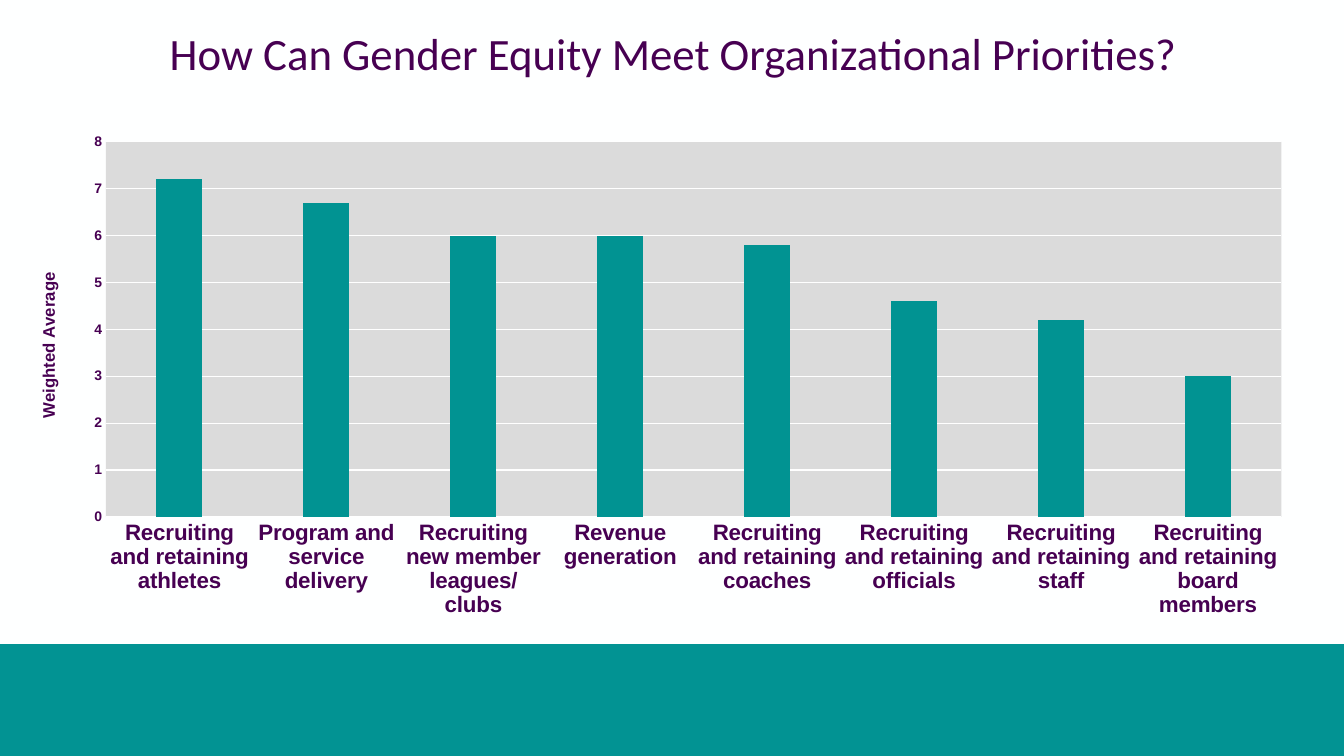
from dataclasses import dataclass

from lxml import etree
from pptx import Presentation
from pptx.chart.data import CategoryChartData
from pptx.dml.color import RGBColor
from pptx.enum import chart as charts, shapes, text
from pptx.oxml import ns, parse_xml
from pptx.util import Inches, Pt


@dataclass(frozen=True)
class Theme:
    paper: str = "FEFFFF"
    teal: str = "029393"
    bar: str = "019392"
    purple: str = "470052"
    plot: str = "DBDBDB"
    grid: str = "FFFFFF"
    title_font: str = "Calibri"
    chart_font: str = "Arial"
    title_size: int = 32
    category_size: int = 16
    axis_title_size: int = 12
    value_size: int = 10


THEME = Theme()
PRIORITIES = {
    "Recruiting and retaining athletes": 7.2,
    "Program and service delivery": 6.7,
    "Recruiting new member leagues/clubs": 6,
    "Revenue generation": 6,
    "Recruiting and retaining coaches": 5.8,
    "Recruiting and retaining officials": 4.6,
    "Recruiting and retaining staff": 4.2,
    "Recruiting and retaining board members": 3,
}


def rgb(colour):
    return RGBColor.from_string(colour)


def style_font(font, size, colour, name, bold=False):
    font.size, font.name, font.bold = Pt(size), name, bold
    font.color.rgb = rgb(colour)


def style_line(line, colour, width):
    line.color.rgb = rgb(colour)
    line.width = Pt(width)


def area_style(colour, border=""):
    """Fill and border for a chart area, as chart XML."""
    return parse_xml(
        f'<c:spPr {ns.nsdecls("c", "a")}><a:solidFill><a:srgbClr val="{colour}"/>'
        f"</a:solidFill>{border}</c:spPr>")


def set_layout(parent, inner=False, **fractions):
    """Place a chart part at fractions of the chart's own size."""
    for old in parent.findall(ns.qn("c:layout")):
        parent.remove(old)
    layout = etree.Element(ns.qn("c:layout"))
    manual = etree.SubElement(layout, ns.qn("c:manualLayout"))
    settings = {"layoutTarget": "inner"} if inner else {}
    settings.update(xMode="edge", yMode="edge", **fractions)
    for tag, value in settings.items():
        etree.SubElement(manual, ns.qn(f"c:{tag}")).set("val", str(value))
    return layout


def add_title(page, box, wording):
    title = page.shapes.title
    title.left, title.top, title.width, title.height = map(Inches, box)
    frame = title.text_frame
    frame.text = wording
    frame.word_wrap = True
    frame.auto_size = text.MSO_AUTO_SIZE.NONE
    frame.vertical_anchor = text.MSO_ANCHOR.TOP
    para = frame.paragraphs[0]
    para.alignment = text.PP_ALIGN.CENTER
    para.line_spacing = 0.9
    style_font(para.runs[0].font, THEME.title_size, THEME.purple, THEME.title_font)


def add_band(page, box):
    band = page.shapes.add_shape(shapes.MSO_SHAPE.RECTANGLE, *map(Inches, box))
    band.shadow.inherit = False
    band.fill.solid()
    band.fill.fore_color.rgb = rgb(THEME.teal)
    band.line.fill.background()


def style_axes(chart):
    category, value = chart.category_axis, chart.value_axis
    for axis, size in ((category, THEME.category_size), (value, THEME.value_size)):
        axis.major_tick_mark = axis.minor_tick_mark = charts.XL_TICK_MARK.NONE
        style_font(axis.tick_labels.font, size, THEME.purple, THEME.chart_font, True)
    style_line(category.format.line, THEME.grid, 0.75)

    value.minimum_scale, value.maximum_scale, value.major_unit = 0, 8, 1
    value.tick_labels.number_format = "0"
    value.tick_labels.number_format_is_linked = False
    value.format.line.fill.background()
    style_line(value.major_gridlines.format.line, THEME.grid, 0.75)

    para = value.axis_title.text_frame.paragraphs[0]
    para.text = "Weighted Average"
    style_font(para.runs[0].font, THEME.axis_title_size, THEME.purple,
               THEME.chart_font, True)
    title = value.axis_title._element
    title.find(ns.qn("c:tx")).addnext(set_layout(title, x=0.01, y=0.29))
    turned = title.find(".//" + ns.qn("a:bodyPr"))
    turned.set("rot", "-5400000")
    turned.set("vert", "horz")


def add_priority_chart(page, box, priorities):
    data = CategoryChartData()
    data.categories = list(priorities)
    data.add_series("Series 1", list(priorities.values()))
    chart = page.shapes.add_chart(
        charts.XL_CHART_TYPE.COLUMN_CLUSTERED, *map(Inches, box), data).chart
    chart.has_legend = chart.has_title = False
    style_font(chart.font, THEME.value_size, THEME.purple, THEME.chart_font)

    # Columns
    columns = chart.plots[0]
    columns.gap_width, columns.overlap = 219, -27
    columns.vary_by_categories = False
    fill = columns.series[0].format.fill
    fill.solid()
    fill.fore_color.rgb = rgb(THEME.bar)

    style_axes(chart)

    # Chart and plot backgrounds
    space = chart._chartSpace
    border = (f'<a:ln w="{Pt(1.75)}"><a:solidFill><a:srgbClr val="{THEME.paper}"/>'
              "</a:solidFill></a:ln>")
    space.find(ns.qn("c:chart")).addnext(area_style(THEME.paper, border))
    plot = space.find(".//" + ns.qn("c:plotArea"))
    plot.insert(0, set_layout(plot, inner=True, x=0.065, y=0.037, w=0.914, h=0.742))
    plot.append(area_style(THEME.plot))


def build_chart_slide(deck):
    page = deck.slides.add_slide(deck.slide_layouts[5])
    page.background.fill.solid()
    page.background.fill.fore_color.rgb = rgb(THEME.paper)
    add_band(page, (0, 6.39, 13.33, 1.11))
    add_title(page, (0.21, 0.27, 12.94, 0.84),
              "How Can Gender Equity Meet Organizational Priorities?")
    add_priority_chart(page, (0.21, 1.21, 12.78, 5.04), PRIORITIES)


def main():
    deck = Presentation()
    deck.slide_width, deck.slide_height = Inches(13.33), Inches(7.5)
    build_chart_slide(deck)
    deck.save("out.pptx")


if __name__ == "__main__":
    main()
